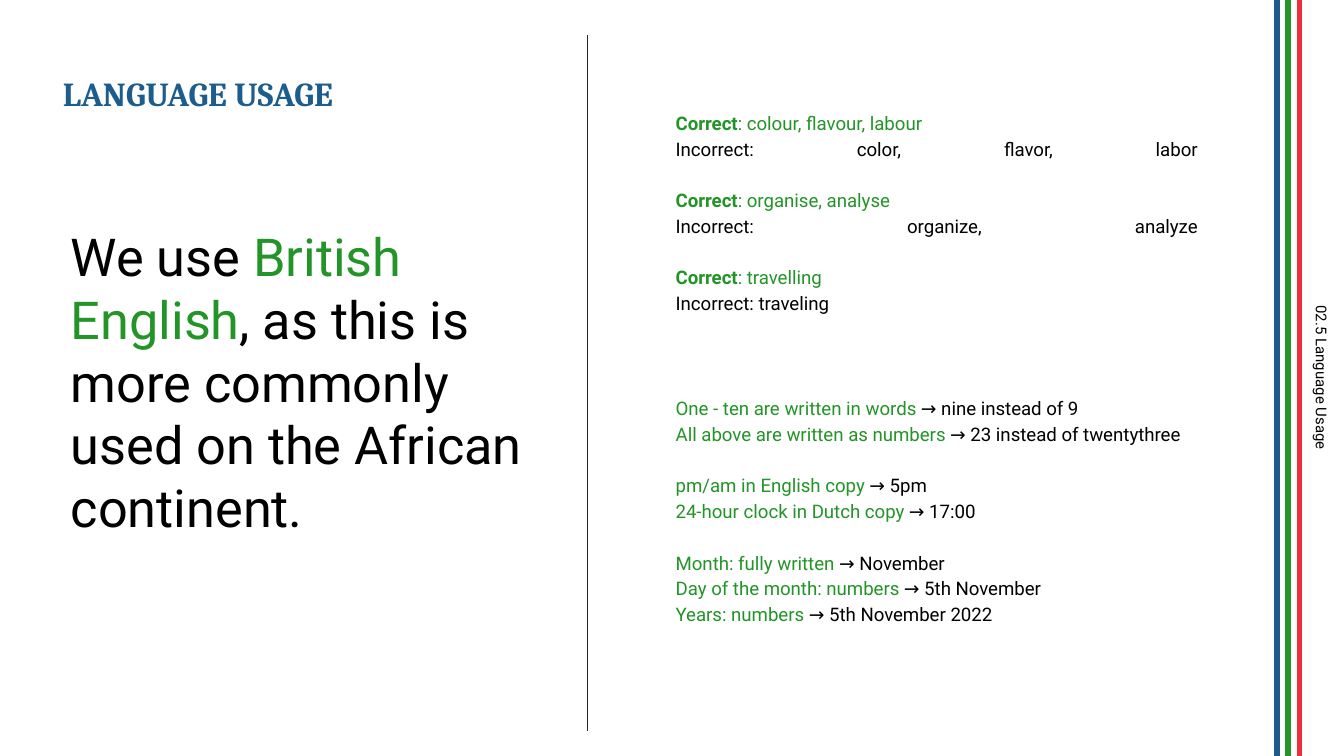
from pptx import Presentation
from pptx.dml.color import RGBColor
from pptx.enum.shapes import MSO_CONNECTOR
from pptx.enum.text import PP_ALIGN
from pptx.oxml.ns import qn
from pptx.util import Cm, Pt
from lxml.etree import SubElement

BLUE, GREEN, RED = "1D5D8D", "239428", "EF2E3A"
BLACK, CHARCOAL = "000000", "24282C"
INSET = Cm(0.25)

SPELLINGS = [
    (": colour, flavour, labour ", "Incorrect: color, flavor, labor"),
    (": organise, analyse", "Incorrect: organize, analyze"),
    (": travelling ", "Incorrect: traveling"),
]
NUMBER_RULES = [
    [("One - ten are written in words", " → nine instead of 9"),
     ("All above are written as numbers", " → 23 instead of twentythree")],
    [("pm/am in English copy ", "→ 5pm"),
     ("24-hour clock in Dutch copy", " → 17:00")],
    [("Month: fully written ", "→ November"),
     ("Day of the month: numbers", " → 5th November"),
     ("Years: numbers ", "→ 5th November 2022")],
]


def rgb(hex_color):
    return RGBColor.from_string(hex_color)


def add_rule(slide, x, top, bottom, color, width):
    rule = slide.shapes.add_connector(
        MSO_CONNECTOR.STRAIGHT, Cm(x), Cm(top), Cm(x), Cm(bottom))
    rule.line.color.rgb = rgb(color)
    rule.line.width = Pt(width)
    SubElement(rule._element.spPr, qn("a:effectLst"))


def add_text_box(slide, left, top, width, height):
    box = slide.shapes.add_textbox(Cm(left), Cm(top), Cm(width), Cm(height))
    frame = box.text_frame
    frame.word_wrap = True
    frame.margin_left = frame.margin_right = INSET
    frame.margin_top = frame.margin_bottom = INSET
    return box


def add_paragraph(frame, runs, size, font="Roboto", align=PP_ALIGN.LEFT, spacing=1.0):
    """Fill the empty first paragraph or append one; runs are (text, color, bold)."""
    first = frame.paragraphs[0]
    paragraph = frame.add_paragraph() if first.runs else first
    paragraph.alignment = align
    paragraph.line_spacing = spacing
    paragraph.font.name = font
    paragraph.font.size = Pt(size)
    for text, color, bold in runs:
        run = paragraph.add_run()
        run.text = text
        run.font.color.rgb = rgb(color)
        run.font.bold = bold
    return paragraph


def add_example(frame, runs):
    return add_paragraph(frame, runs, 10, align=PP_ALIGN.JUSTIFY, spacing=1.15)


def add_spellings(slide):
    frame = add_text_box(slide, 12.52, 1.8, 10.36, 4.37).text_frame
    for correct, incorrect in SPELLINGS:
        add_example(frame, [("Correct", GREEN, True), (correct, GREEN, False)])
        wrong = add_example(frame, [(incorrect, BLACK, False)])
        # The closing line break stretches the justified line
        if correct != SPELLINGS[-1][0]:
            wrong.add_line_break()


def add_number_rules(slide):
    frame = add_text_box(slide, 12.52, 7.19, 10.36, 5.28).text_frame
    for group in NUMBER_RULES:
        for rule, example in group:
            paragraph = add_example(
                frame, [(rule, GREEN, False), (example, BLACK, False)])
        paragraph.space_after = Pt(13.8)


def main():
    presentation = Presentation()
    presentation.slide_width, presentation.slide_height = Cm(25.4), Cm(14.29)
    slide = presentation.slides.add_slide(presentation.slide_layouts[6])

    # Stripes and section label on the right edge
    for i, color in enumerate((BLUE, "249428", RED)):
        add_rule(slide, 24.13 + 0.215 * i, -0.56, 14.68, color, 3)
    section = add_text_box(slide, 19.58, 6.71, 10.77, 0.86)
    section.rotation = 90
    label = add_paragraph(section.text_frame, [("02.5 Language Usage", BLACK, False)],
                          8, align=PP_ALIGN.CENTER, spacing=1.15)
    label.space_before, label.space_after = Pt(16), Pt(4)

    # Heading and main statement
    heading = add_text_box(slide, 0.94, 1.52, 8.76, 1.09)
    add_paragraph(heading.text_frame, [("LANGUAGE USAGE", BLUE, True)],
                  18, font="Cambria", spacing=0.5)
    statement = add_text_box(slide, 1.09, 3.99, 9.09, 6.5)
    add_paragraph(statement.text_frame, [
        ("We use ", BLACK, False),
        ("British English", GREEN, False),
        (", as this is more commonly used on the African continent.", BLACK, False),
    ], 28)

    # Examples
    add_spellings(slide)
    add_number_rules(slide)

    # Divider between statement and examples
    add_rule(slide, 11.1, 0.66, 13.82, CHARCOAL, 0.75)

    presentation.save("out.pptx")


if __name__ == "__main__":
    main()
